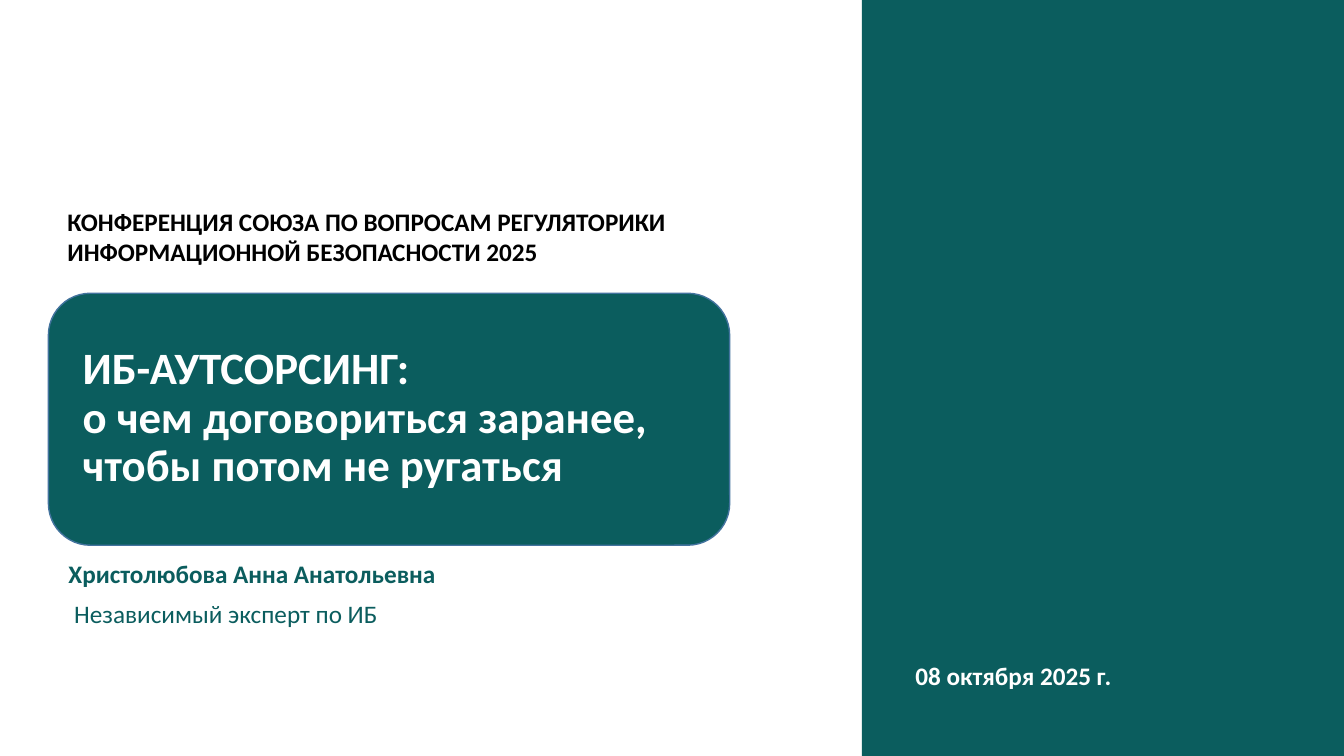
from pptx import Presentation, util as u
from pptx.dml.color import RGBColor
from pptx.enum import shapes, text

Cm, Pt = u.Cm, u.Pt
COLORS = {"teal": "0B5D5E", "outline": "43739E", "white": "FFFFFF", "black": "000000"}
FONT = "Calibri"


def rgb(name):
    return RGBColor.from_string(COLORS[name])


def place(sp, x, y, w, h):
    """Position a shape by lengths in centimetres."""
    sp.left, sp.top, sp.width, sp.height = Cm(x), Cm(y), Cm(w), Cm(h)


def bring_to_front(sp):
    sp.element.getparent().append(sp.element)


def add_block(slide, kind, x, y, w, h, line=None):
    sp = slide.shapes.add_shape(kind, Cm(x), Cm(y), Cm(w), Cm(h))
    sp.shadow.inherit = False
    sp.fill.solid()
    sp.fill.fore_color.rgb = rgb("teal")
    if line:
        sp.line.color.rgb = rgb(line)
        sp.line.width = Pt(1)
    else:
        sp.line.fill.background()
    return sp


def write(sp, words, color, size=18, bold=True, anchor=text.MSO_ANCHOR.TOP, wrap=True):
    """Fill a shape with one left-aligned paragraph and return that paragraph."""
    tf = sp.text_frame
    tf.word_wrap = wrap
    tf.auto_size = text.MSO_AUTO_SIZE.NONE
    tf.vertical_anchor = anchor
    tf.text = words
    p = tf.paragraphs[0]
    p.alignment = text.PP_ALIGN.LEFT
    p.font.name, p.font.size, p.font.bold = FONT, Pt(size), bold
    p.font.color.rgb = rgb(color)
    return p


def add_text(slide, words, color, x, y, w, h, **style):
    sp = slide.shapes.add_textbox(Cm(x), Cm(y), Cm(w), Cm(h))
    write(sp, words, color, **style)
    return sp


def date_panel(slide, x, y, w, h):
    add_block(slide, shapes.MSO_SHAPE.RECTANGLE, x, y, w, h)
    date = add_text(slide, "08 октября 2025 г.", "white", x + 1.1, y + h - 2.54,
                    w - 2.18, 0.89, anchor=text.MSO_ANCHOR.MIDDLE)
    date.text_frame.margin_bottom = 0


def title_card(slide, x, y, w, h):
    add_block(slide, shapes.MSO_SHAPE.ROUNDED_RECTANGLE, x, y, w, h, line="outline")
    title = slide.shapes.title
    place(title, x + 0.61, y + 0.28, w - 0.94, h - 0.58)
    p = write(title, "ИБ-АУТСОРСИНГ: \vо чем договориться заранее, чтобы потом не ругаться",
              "white", size=32, anchor=text.MSO_ANCHOR.MIDDLE)
    p.line_spacing = 0.9
    bring_to_front(title)


def speaker(slide, x, y, w):
    name = slide.placeholders[1]
    place(name, x, y, w, 0.91)
    p = write(name, "Христолюбова Анна Анатольевна", "teal")
    p.line_spacing, p.space_before = 0.8, Pt(10)
    bring_to_front(name)
    add_text(slide, "Независимый эксперт по ИБ", "teal", x + 0.15, y + 0.84,
             8.15, 1.02, bold=False, wrap=False)


def cover(prs):
    slide = prs.slides.add_slide(prs.slide_layouts[0])
    date_panel(slide, 21.72, 0, 12.15, 19.05)
    title_card(slide, 1.22, 7.39, 17.17, 6.35)
    speaker(slide, 1.47, 14.1, 10.46)
    add_text(slide, "КОНФЕРЕНЦИЯ СОЮЗА ПО ВОПРОСАМ РЕГУЛЯТОРИКИ ИНФОРМАЦИОННОЙ БЕЗОПАСНОСТИ 2025",
             "black", 1.45, 5.08, 16.94, 1.8)


def main():
    prs = Presentation()
    prs.slide_width, prs.slide_height = Cm(33.87), Cm(19.05)
    cover(prs)
    prs.save("out.pptx")


if __name__ == "__main__":
    main()
